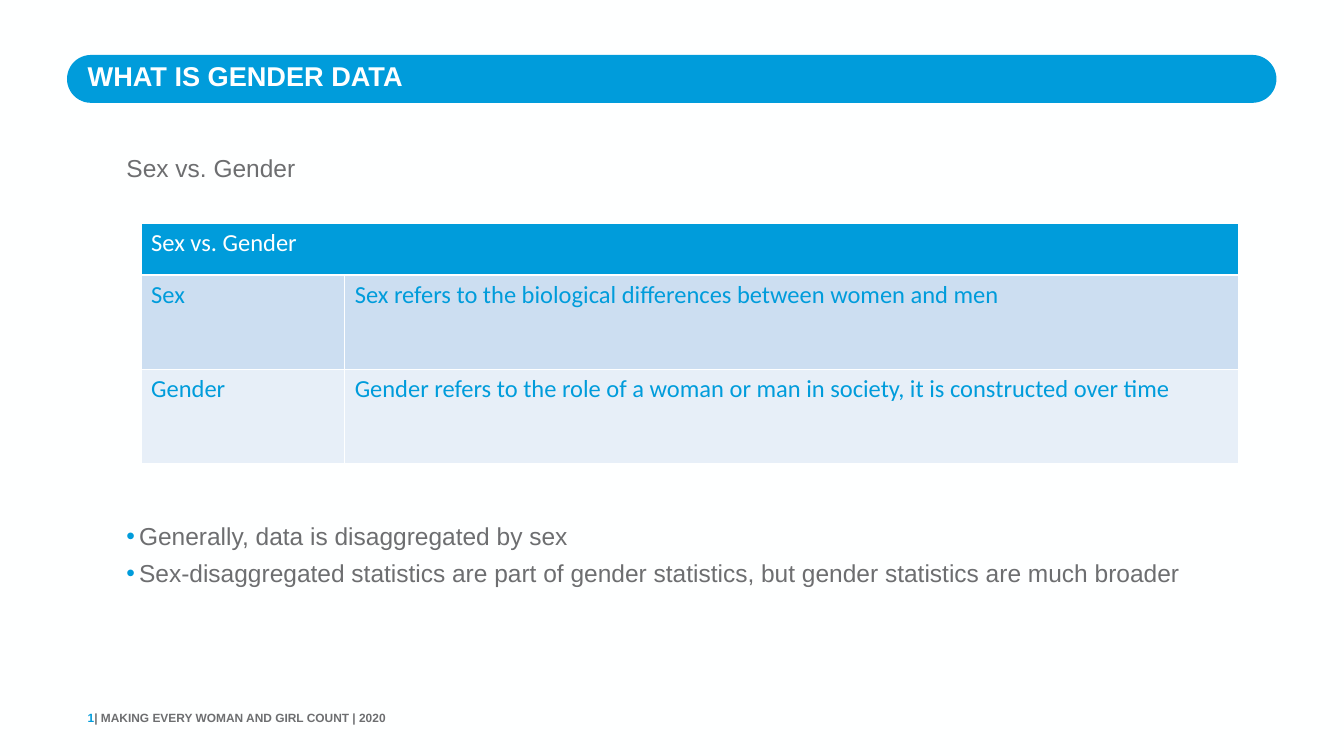
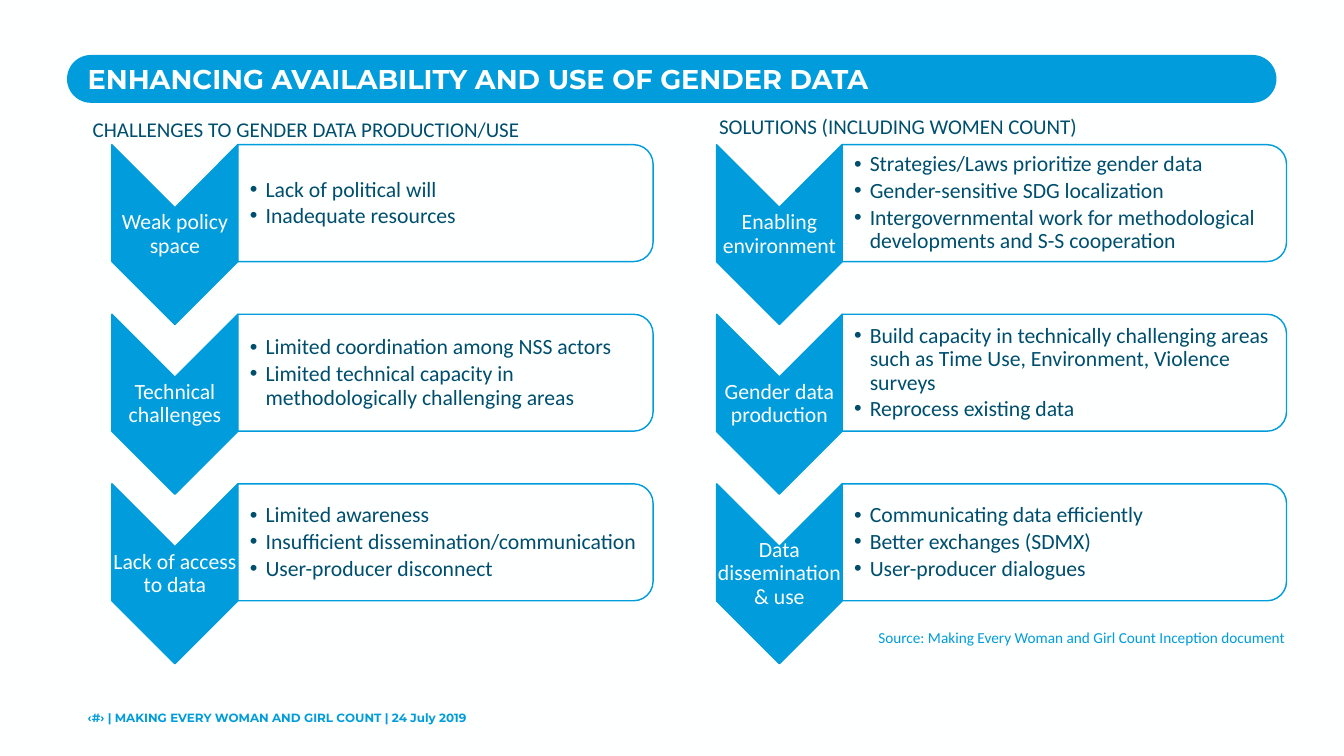
from lxml import etree
from pptx import Presentation
from pptx.dml.color import RGBColor
from pptx.enum.shapes import MSO_SHAPE
from pptx.enum.text import MSO_ANCHOR, MSO_AUTO_SIZE, PP_ALIGN
from pptx.oxml.ns import qn
from pptx.util import Inches, Pt

BLUE = RGBColor(0x00, 0x9C, 0xDB)
NAVY = RGBColor(0x00, 0x4E, 0x6E)
GREY = RGBColor(0x6D, 0x6E, 0x70)
WHITE = RGBColor(0xFE, 0xFF, 0xFF)
ROW_DARK = RGBColor(0xCC, 0xDE, 0xF1)
ROW_LIGHT = RGBColor(0xE7, 0xEF, 0xF8)

ROUND_RECT = MSO_SHAPE.ROUNDED_RECTANGLE
CHEVRON = MSO_SHAPE.CHEVRON
ROUND_TOP = MSO_SHAPE.ROUND_2_SAME_RECTANGLE
TOP, MIDDLE = MSO_ANCHOR.TOP, MSO_ANCHOR.MIDDLE
LEFT, CENTER = PP_ALIGN.LEFT, PP_ALIGN.CENTER
NO_AUTOSIZE = MSO_AUTO_SIZE.NONE

NO_INSETS = (0, 0, 0, 0)
WIDE_INSETS = (0.2, 0.1, 0.2, 0.1)
TIGHT_INSETS = (0.02, 0.02, 0.02, 0.02)
LIST_INSETS = (0.24, 0.02, 0.02, 0.02)
BOX_INSETS = (0.1, 0.05, 0.1, 0.05)

DEFINITION_TITLE = "WHAT IS GENDER DATA"
DEFINITION_FOOTER = [("1", BLUE), ("| MAKING EVERY WOMAN AND GIRL COUNT | 2020", GREY)]
DEFINITION_HEADING = "Sex vs. Gender"
DEFINITIONS = [
    ("Sex", "Sex refers to the biological differences between women and men"),
    ("Gender", "Gender refers to the role of a woman or man in society, it is constructed over time"),
]
DEFINITION_NOTES = [
    "Generally, data is disaggregated by sex",
    "Sex-disaggregated statistics are part of gender statistics, but gender statistics are much broader",
]

USE_TITLE = "ENHANCING AVAILABILITY AND USE OF GENDER DATA"
USE_FOOTER = [("‹#› | MAKING EVERY WOMAN AND GIRL COUNT | 24 July 2019", BLUE)]
USE_SOURCE = "Source: Making Every Woman and Girl Count Inception document"
USE_COLUMNS = [
    {
        "heading": "CHALLENGES TO GENDER DATA PRODUCTION/USE",
        "heading_at": (1.74, 2.26, 12.23, 0.61),
        "left": 2.22, "chevron_w": 2.5, "panel_w": 8.24,
        "steps": [
            ("Weak policy space", ["Lack of political will", "Inadequate resources"]),
            ("Technical challenges", [
                "Limited coordination among NSS actors",
                "Limited technical capacity in methodologically challenging areas"]),
            ("Lack of access to data", [
                "Limited awareness",
                "Insufficient dissemination/communication",
                "User-producer disconnect"]),
        ],
    },
    {
        "heading": "SOLUTIONS (INCLUDING WOMEN COUNT)",
        "heading_at": (14.17, 2.2, 12.01, 0.61),
        "left": 14.22, "chevron_w": 2.49, "panel_w": 8.82,
        "steps": [
            ("Enabling environment", [
                "Strategies/Laws prioritize gender data",
                "Gender-sensitive SDG localization",
                "Intergovernmental work for methodological developments and S-S cooperation"]),
            ("Gender data production", [
                "Build capacity in technically challenging areas such as Time Use, Environment, "
                "Violence surveys",
                "Reprocess existing data"]),
            ("Data dissemination & use", [
                "Communicating data efficiently",
                "Better exchanges (SDMX)",
                "User-producer dialogues"]),
        ],
    },
]
STEPS_TOP, STEP_PITCH = 2.87, 3.365
CHEVRON_H, PANEL_H = 3.57, 2.32


def inches(values):
    return [Inches(v) for v in values]


def set_frame(tf, insets, anchor=TOP):
    tf.word_wrap = True
    tf.auto_size = NO_AUTOSIZE
    tf.vertical_anchor = anchor
    tf.margin_left, tf.margin_top, tf.margin_right, tf.margin_bottom = inches(insets)


def add_run(p, text, font, size, color, bold=False):
    r = p.add_run()
    r.text = text
    r.font.name, r.font.size, r.font.bold = font, Pt(size), bold
    r.font.color.rgb = color


def add_bullet(p, indent, color):
    pPr = p._p.get_or_add_pPr()
    pPr.set("marL", str(Inches(indent)))
    pPr.set("indent", str(-Inches(indent)))
    clr = etree.SubElement(pPr, qn("a:buClr"))
    etree.SubElement(clr, qn("a:srgbClr"), val=str(color))
    etree.SubElement(pPr, qn("a:buFont"), typeface="Arial")
    etree.SubElement(pPr, qn("a:buChar"), char="•")


def add_text(s, at, lines, font, size, color, insets=BOX_INSETS, anchor=TOP, align=LEFT,
             bullet=None, spacing=1.0, before=0, after=0):
    """Add a text box; bullet is an (indent, colour) pair."""
    tf = s.shapes.add_textbox(*inches(at)).text_frame
    set_frame(tf, insets, anchor)
    for i, line in enumerate(lines):
        p = tf.add_paragraph() if i else tf.paragraphs[0]
        if bullet:
            add_bullet(p, *bullet)
        p.alignment, p.line_spacing = align, spacing
        p.space_before, p.space_after = Pt(before if i else 0), Pt(after)
        add_run(p, line, font, size, color)


def add_filled(s, kind, at, fill, line=None):
    sp = s.shapes.add_shape(kind, *inches(at))
    sp.shadow.inherit = False
    sp.fill.solid()
    sp.fill.fore_color.rgb = fill
    if line:
        sp.line.color.rgb, sp.line.width = line, Pt(2)
    else:
        sp.line.fill.background()
    return sp


def add_turned(s, kind, left, top, width, height, fill):
    """Add a shape turned a quarter clockwise that covers the given area."""
    shift = (width - height) / 2
    sp = add_filled(s, kind, (left + shift, top - shift, height, width), fill, BLUE)
    sp.rotation = 90
    return sp


def prepare_layout(prs):
    """Give the title-only layout the background and the title band."""
    layout = prs.slide_layouts[5]
    layout.background.fill.solid()
    layout.background.fill.fore_color.rgb = WHITE
    return layout


def add_slide(prs, layout, title, title_top, font, footer):
    s = prs.slides.add_slide(layout)
    band = add_filled(s, ROUND_RECT, (1.33, 1.09, 24, 0.95), BLUE)
    band.adjustments[0] = 0.5
    s.shapes._spTree.insert(2, band._element)

    sp = s.shapes.title
    sp.left, sp.top, sp.width, sp.height = inches((1.74, title_top, 23.22, 0.65))
    set_frame(sp.text_frame, NO_INSETS)
    p = sp.text_frame.paragraphs[0]
    p.alignment = LEFT
    add_run(p, title, font, 38.8, WHITE, True)

    tf = s.shapes.add_textbox(*inches((1.74, 14.09, 14.22, 0.29))).text_frame
    set_frame(tf, NO_INSETS)
    for text, color in footer:
        add_run(tf.paragraphs[0], text, font, 17, color, True)
    return s


def style_cell(cell, text, color, fill, bottom=1):
    tcPr = cell._tc.get_or_add_tcPr()
    for side, width in (("L", 1), ("R", 1), ("T", 1), ("B", bottom)):
        ln = etree.SubElement(tcPr, qn("a:ln" + side), w=str(Pt(width)))
        solid = etree.SubElement(ln, qn("a:solidFill"))
        etree.SubElement(solid, qn("a:srgbClr"), val=str(WHITE))
    cell.fill.solid()
    cell.fill.fore_color.rgb = fill
    cell.margin_left, cell.margin_top, cell.margin_right, cell.margin_bottom = inches(WIDE_INSETS)
    if text:
        add_run(cell.text_frame.paragraphs[0], text, "Calibri", 35, color)


def add_definitions(s):
    rows = [(DEFINITION_HEADING, "")] + DEFINITIONS
    table = s.shapes.add_table(len(rows), 2, *inches((2.8, 4.43, 21.78, 4.77))).table
    table.horz_banding = False
    for col, width in zip(table.columns, (4.04, 17.74)):
        col.width = Inches(width)
    looks = [(1.03, WHITE, BLUE, 3), (1.87, BLUE, ROW_DARK, 1), (1.87, BLUE, ROW_LIGHT, 1)]
    for i, (texts, (height, color, fill, bottom)) in enumerate(zip(rows, looks)):
        table.rows[i].height = Inches(height)
        for j, text in enumerate(texts):
            style_cell(table.cell(i, j), text, color, fill, bottom)
    table.cell(0, 0).merge(table.cell(0, 1))


def add_step(s, column, top, label, points):
    left, chevron_w, panel_w = column["left"], column["chevron_w"], column["panel_w"]
    panel_left = left + chevron_w
    add_turned(s, CHEVRON, left, top, chevron_w, CHEVRON_H, BLUE)
    add_text(s, (left, top + 1.25, chevron_w, 1.07), [label], "Calibri", 31, WHITE,
             TIGHT_INSETS, MIDDLE, CENTER, spacing=0.9)
    panel = add_turned(s, ROUND_TOP, panel_left, top, panel_w, PANEL_H, WHITE)
    color = panel.fill._xPr.find(qn("a:solidFill"))[0]
    etree.SubElement(color, qn("a:alpha"), val="90000")
    add_text(s, (panel_left, top + 0.12, panel_w - 0.11, 2.09), points, "Calibri", 31, NAVY,
             LIST_INSETS, MIDDLE, bullet=(0.31, NAVY), spacing=0.9, after=4.65)


def build_definition_slide(prs, layout):
    s = add_slide(prs, layout, DEFINITION_TITLE, 1.17, "Arial", DEFINITION_FOOTER)
    add_text(s, (2.31, 2.88, 22.26, 0.9), [DEFINITION_HEADING], "Arial", 35, GREY,
             WIDE_INSETS, spacing=1.1)
    add_definitions(s)
    add_text(s, (2.31, 10.18, 22.26, 1.97), DEFINITION_NOTES, "Arial", 35, GREY,
             WIDE_INSETS, bullet=(0.25, BLUE), spacing=1.1, before=7)


def build_use_slide(prs, layout):
    s = add_slide(prs, layout, USE_TITLE, 1.23, "Montserrat", USE_FOOTER)
    for column in USE_COLUMNS:
        for i, (label, points) in enumerate(column["steps"]):
            add_step(s, column, STEPS_TOP + i * STEP_PITCH, label, points)
        add_text(s, column["heading_at"], [column["heading"]], "Calibri", 30, NAVY)
    add_text(s, (17.33, 12.41, 9.3, 0.47), [USE_SOURCE], "Calibri", 21.8, BLUE)


def main():
    prs = Presentation()
    prs.slide_width, prs.slide_height = Inches(26.67), Inches(15)
    layout = prepare_layout(prs)
    build_definition_slide(prs, layout)
    build_use_slide(prs, layout)
    prs.save("out.pptx")


if __name__ == "__main__":
    main()
